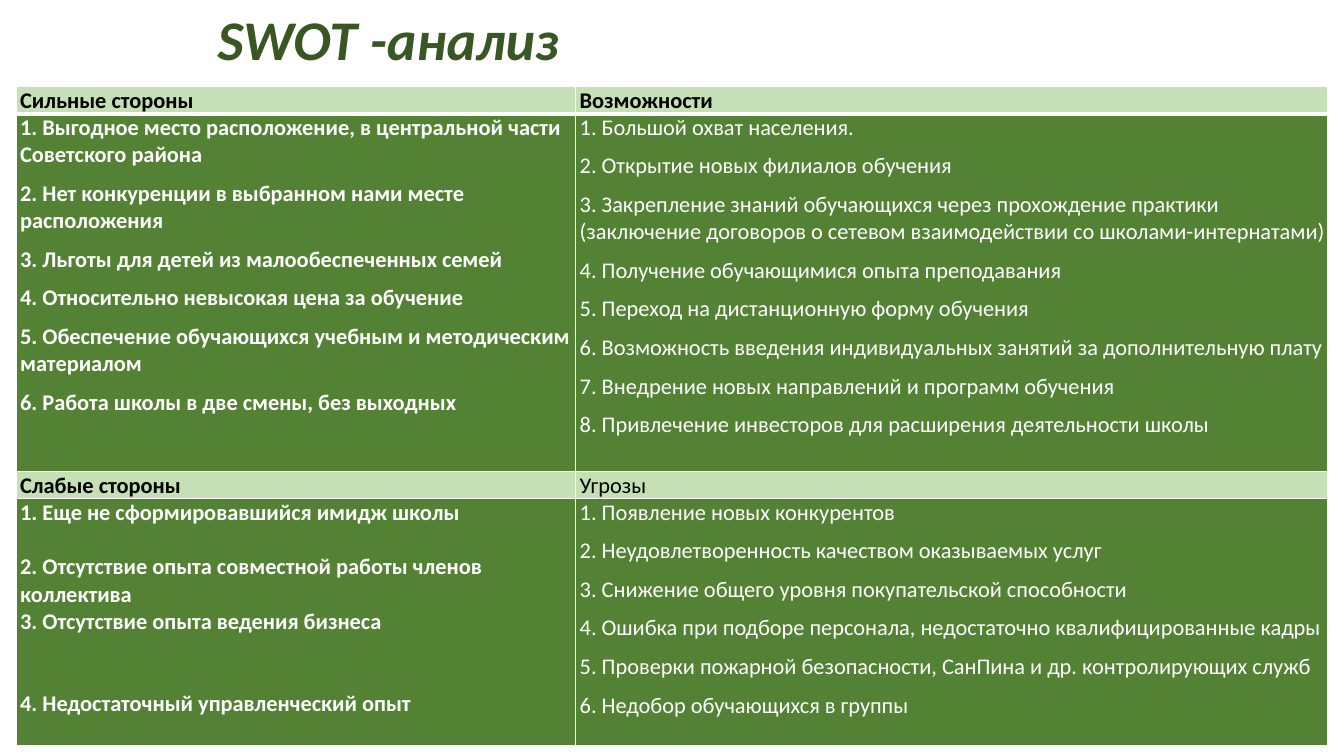
import pptx
import pptx.util
import pptx.dml.color
import pptx.enum.text
import pptx.oxml.ns
import lxml.etree
from dataclasses import dataclass

Inches = pptx.util.Inches
Pt = pptx.util.Pt
Color = pptx.dml.color.RGBColor.from_string


@dataclass
class Theme:
    font: str = "Calibri"
    title_size: int = 40
    body_size: int = 16
    title: str = "385723"
    heading_fill: str = "C5E0B4"
    heading_text: str = "000000"
    list_fill: str = "548235"
    list_text: str = "FFFFFF"
    border: str = "FFFFFF"


theme = Theme()


def style_font(font, size, color, bold):
    font.name = theme.font
    font.size = Pt(size)
    font.bold = bold
    font.color.rgb = Color(color)


def add_border(cell, side, width):
    qn = pptx.oxml.ns.qn
    properties = cell._tc.get_or_add_tcPr()
    line = lxml.etree.SubElement(properties, qn(f"a:ln{side}"), w=str(Pt(width)))
    fill = lxml.etree.SubElement(line, qn("a:solidFill"))
    lxml.etree.SubElement(fill, qn("a:srgbClr"), val=theme.border)


strengths = [
    "1. Выгодное место расположение, в центральной части Советского района",
    "2. Нет конкуренции в выбранном нами месте расположения",
    "3. Льготы для детей из малообеспеченных семей",
    "4. Относительно невысокая цена за обучение",
    "5. Обеспечение обучающихся учебным и методическим материалом",
    "6. Работа школы в две смены, без выходных",
]
opportunities = [
    "1. Большой охват населения.",
    "2. Открытие новых филиалов обучения",
    "3. Закрепление знаний обучающихся через прохождение практики "
    "(заключение договоров о сетевом взаимодействии со школами-интернатами)",
    "4. Получение обучающимися опыта преподавания",
    "5. Переход на дистанционную форму обучения",
    "6. Возможность введения индивидуальных занятий за дополнительную плату",
    "7. Внедрение новых направлений и программ обучения",
    "8. Привлечение инвесторов для расширения деятельности школы",
]
weaknesses = [
    "1. Еще не сформировавшийся имидж школы",
    "2. Отсутствие опыта совместной работы членов коллектива",
    "3. Отсутствие опыта ведения бизнеса",
    "4. Недостаточный управленческий опыт",
]
threats = [
    "1. Появление новых конкурентов",
    "2. Неудовлетворенность качеством оказываемых услуг",
    "3. Снижение общего уровня покупательской способности",
    "4. Ошибка при подборе персонала, недостаточно квалифицированные кадры",
    "5. Проверки пожарной безопасности, СанПина и др. контролирующих служб",
    "6. Недобор обучающихся в группы",
]
swot_rows = [
    [["Сильные стороны"], ["Возможности"]],
    [strengths, opportunities],
    [["Слабые стороны"], ["Угрозы"]],
    [weaknesses, threats],
]
column_widths = [5.55, 7.46]
row_heights = [0.27, 3.55, 0.27, 2.45]
default_gap = 8
weakness_gaps = [19.5, 0, 39, 0]
bold_cells = {(0, 0), (0, 1), (1, 0), (2, 0), (3, 0)}

deck = pptx.Presentation()
deck.slide_width = Inches(13.33)
deck.slide_height = Inches(7.5)
page = deck.slides.add_slide(deck.slide_layouts[6])

title_box = page.shapes.add_textbox(Inches(2.06), Inches(0), Inches(6.83), Inches(0.84))
title_frame = title_box.text_frame
title_frame.word_wrap = True
title_frame.vertical_anchor = pptx.enum.text.MSO_ANCHOR.MIDDLE
title_para = title_frame.paragraphs[0]
title_para.text = "SWOT -анализ"
title_para.line_spacing = 0.9
title_para.font.italic = True
style_font(title_para.font, theme.title_size, theme.title, True)

table = page.shapes.add_table(
    len(row_heights), len(column_widths), Inches(0.16), Inches(0.86),
    Inches(sum(column_widths)), Inches(sum(row_heights)),
).table
table.first_row = False
table.horz_banding = False
for column, width in zip(table.columns, column_widths):
    column.width = Inches(width)

for row_index, (height, contents) in enumerate(zip(row_heights, swot_rows)):
    table.rows[row_index].height = Inches(height)
    is_heading = row_index % 2 == 0
    fill_color = theme.heading_fill if is_heading else theme.list_fill
    text_color = theme.heading_text if is_heading else theme.list_text
    for column_index, items in enumerate(contents):
        cell = table.cell(row_index, column_index)
        cell.margin_left = Inches(0.04)
        cell.margin_right = Inches(0.02)
        cell.margin_top = cell.margin_bottom = Inches(0)
        add_border(cell, "L", 1)
        add_border(cell, "R", 1)
        add_border(cell, "T", 3 if row_index == 1 else 1)
        add_border(cell, "B", 3 if row_index == 0 else 1)
        cell.fill.solid()
        cell.fill.fore_color.rgb = Color(fill_color)
        cell.text = "\n".join(items)
        gaps = weakness_gaps if items is weaknesses else [default_gap] * len(items)
        for para, gap in zip(cell.text_frame.paragraphs, gaps):
            para.space_after = Pt(gap)
            style_font(para.font, theme.body_size, text_color,
                       (row_index, column_index) in bold_cells)

deck.save("out.pptx")
